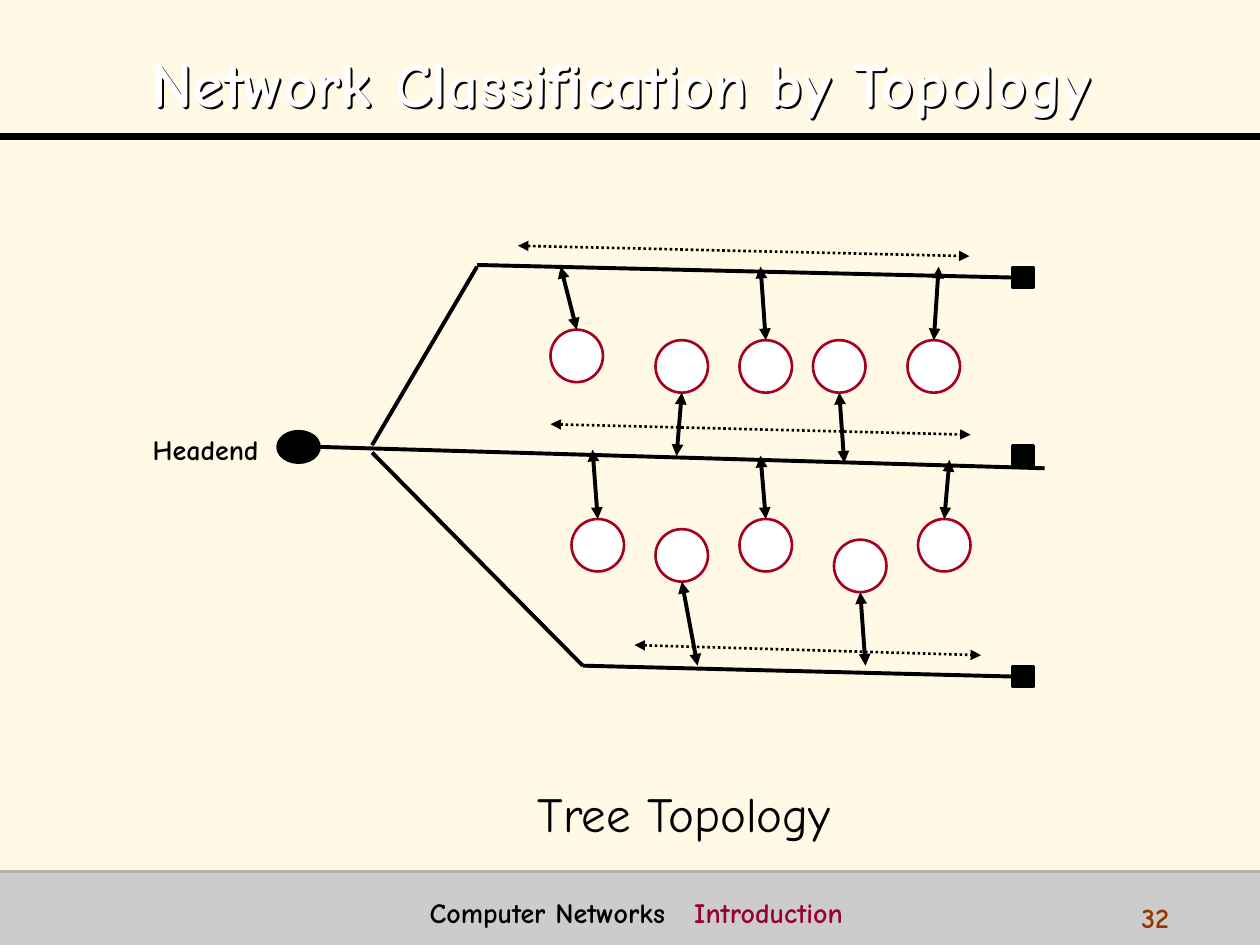
import pptx
import pptx.util
import pptx.dml.color
import pptx.enum.dml
import pptx.enum.shapes
import pptx.enum.text
import pptx.oxml

Pt = pptx.util.Pt
RGB = pptx.dml.color.RGBColor
KIND = pptx.enum.shapes.MSO_SHAPE
ALIGN = pptx.enum.text.PP_ALIGN
ANCHOR = pptx.enum.text.MSO_ANCHOR
DOTS = pptx.enum.dml.MSO_LINE.ROUND_DOT

BLACK = RGB(0, 0, 0)
WHITE = RGB(255, 255, 255)
CREAM = RGB(0xFF, 0xF9, 0xE6)
GREY = RGB(0xCC, 0xCC, 0xCC)
EDGE = RGB(0xB2, 0xB2, 0xB2)
RED = RGB(0xA5, 0x00, 0x21)
WINE = RGB(0x99, 0x00, 0x33)
RUST = RGB(0x99, 0x33, 0x00)
FONT = "Comic Neue"
NS = 'xmlns:a="http://schemas.openxmlformats.org/drawingml/2006/main"'

WIDE, HIGH = 720, 540
RULE, FOOT = 78, 498
NODE, STOP = 30, 12

# Stations: centre x, top y, and the point on the cable that each one taps
NODES = [
    (329.6, 188.4, (320.4, 152.4)),
    (389.6, 194.4, (386.6, 260.6)),
    (437.6, 194.4, (434.6, 152.4)),
    (479.6, 194.4, (482.4, 264.4)),
    (533.6, 194.4, (536.4, 152.4)),
    (341.6, 296.6, (338.6, 257)),
    (389.6, 302.4, (398.6, 380.4)),
    (437.6, 296.6, (434.6, 260.4)),
    (491.6, 308.4, (494.6, 380.4)),
    (539.6, 296.6, (542.6, 262.8)),
]
# Terminators at the right end of each cable: left x, top y
STOPS = {"upper": (578.6, 152.6), "middle": (578.6, 254.4),
         "lower": (578.6, 380.6)}
# Cables that end at a terminator's left side
ENDS = {"upper": (272.6, 151.4), "lower": (333, 380.4)}
CABLES = [
    ((183, 255.4), (597, 267.6)),
    ((212.6, 254.4), (272.6, 152.4)),
    ((212.6, 258.6), (333, 380.4)),
]
FLOWS = [
    ((296, 140.4), (554, 146.4)),
    ((314.6, 242.4), (554.6, 248.4)),
    ((362.6, 368.6), (560.6, 374.4)),
]
# Texts: box, alignment, size, bold, runs of (words, colour, letter spacing)
TITLE = ((31.8, 0, 646, 90), ALIGN.CENTER, 36, True,
         [("Network Classification by Topology", WHITE, 0)])
TEXTS = [
    ((80.2, 243.4, 84.4, 23.6), ALIGN.LEFT, 16, True,
     [("Headend", BLACK, 0)]),
    ((242, 444.4, 298, 41), ALIGN.CENTER, 28, False,
     [("Tree Topology", BLACK, 0)]),
    ((645.2, 510.8, 72, 18), ALIGN.LEFT, 16, True, [("32", RUST, 0)]),
    ((101.6, 508.4, 524, 22.4), ALIGN.CENTER, 16, True,
     [("Computer Networks", BLACK, 0), (" ", BLACK, 11),
      ("Introduction", WINE, 0)]),
]

deck = pptx.Presentation()
deck.slide_width, deck.slide_height = Pt(WIDE), Pt(HIGH)
slide = deck.slides.add_slide(deck.slide_layouts[6])
slide.background.fill.solid()
slide.background.fill.fore_color.rgb = CREAM


def shape(kind, box, fill, edge=None):
    item = slide.shapes.add_shape(kind, *map(Pt, box))
    item.shadow.inherit = False
    item.fill.solid()
    item.fill.fore_color.rgb = fill
    if edge is None:
        item.line.fill.background()
    else:
        item.line.color.rgb = edge
        item.line.width = Pt(1.5)
    return item


def line(start, end, width=2.25, color=BLACK, heads=False, dash=None):
    item = slide.shapes.add_connector(
        pptx.enum.shapes.MSO_CONNECTOR.STRAIGHT, *map(Pt, (*start, *end)))
    item.line.width = Pt(width)
    item.line.color.rgb = color
    if dash is not None:
        item.line.dash_style = dash
    if heads:
        for tag in ("headEnd", "tailEnd"):
            item.line._get_or_add_ln().append(
                pptx.oxml.parse_xml(f'<a:{tag} {NS} type="triangle"/>'))
    item._element.spPr.append(pptx.oxml.parse_xml(f"<a:effectLst {NS}/>"))
    return item


def text(box, align, size, bold, runs):
    item = slide.shapes.add_textbox(*map(Pt, box))
    item.text_frame.word_wrap = True
    para = item.text_frame.paragraphs[0]
    para.alignment = align
    for words, color, gap in runs:
        run = para.add_run()
        run.text = words
        run.font.name = FONT
        run.font.size = Pt(size)
        run.font.bold = bold
        run.font.color.rgb = color
        if gap:
            run.font._element.set("spc", str(gap * 100))
    return item


def shade(item):
    """Give the letters of an unfilled box a black drop shadow."""
    item._element.spPr.append(pptx.oxml.parse_xml(
        f'<a:effectLst {NS}><a:outerShdw dist="20500" dir="2700000" '
        'algn="ctr" rotWithShape="0"><a:srgbClr val="000000"/>'
        '</a:outerShdw></a:effectLst>'))


shape(KIND.RECTANGLE, (0, FOOT, WIDE, HIGH - FOOT), GREY)
line((0, RULE), (WIDE, RULE), 4)
line((0, FOOT), (WIDE, FOOT), 2, EDGE)

title = text(*TITLE)
title.text_frame.vertical_anchor = ANCHOR.MIDDLE
title.text_frame.paragraphs[0].line_spacing = 1.1
shade(title)

shape(KIND.OVAL, (158.6, 246.4, 24, 18), BLACK, BLACK)
stops = {name: shape(KIND.RECTANGLE, (*spot, STOP, STOP), BLACK, BLACK)
         for name, spot in STOPS.items()}
rings = [shape(KIND.OVAL, (mid - NODE / 2, top, NODE, NODE), WHITE, RED)
         for mid, top, tap in NODES]

for start, end in CABLES:
    line(start, end)
for name, end in ENDS.items():
    line(STOPS[name], end).begin_connect(stops[name], 1)
for ring, (mid, top, tap) in zip(rings, NODES):
    above = tap[1] < top
    link = line((mid, top if above else top + NODE), tap, heads=True)
    if above:
        link.begin_connect(ring, 0)
for start, end in FLOWS:
    line(start, end, 1.5, heads=True, dash=DOTS)
for item in TEXTS:
    text(*item)

deck.save("out.pptx")
